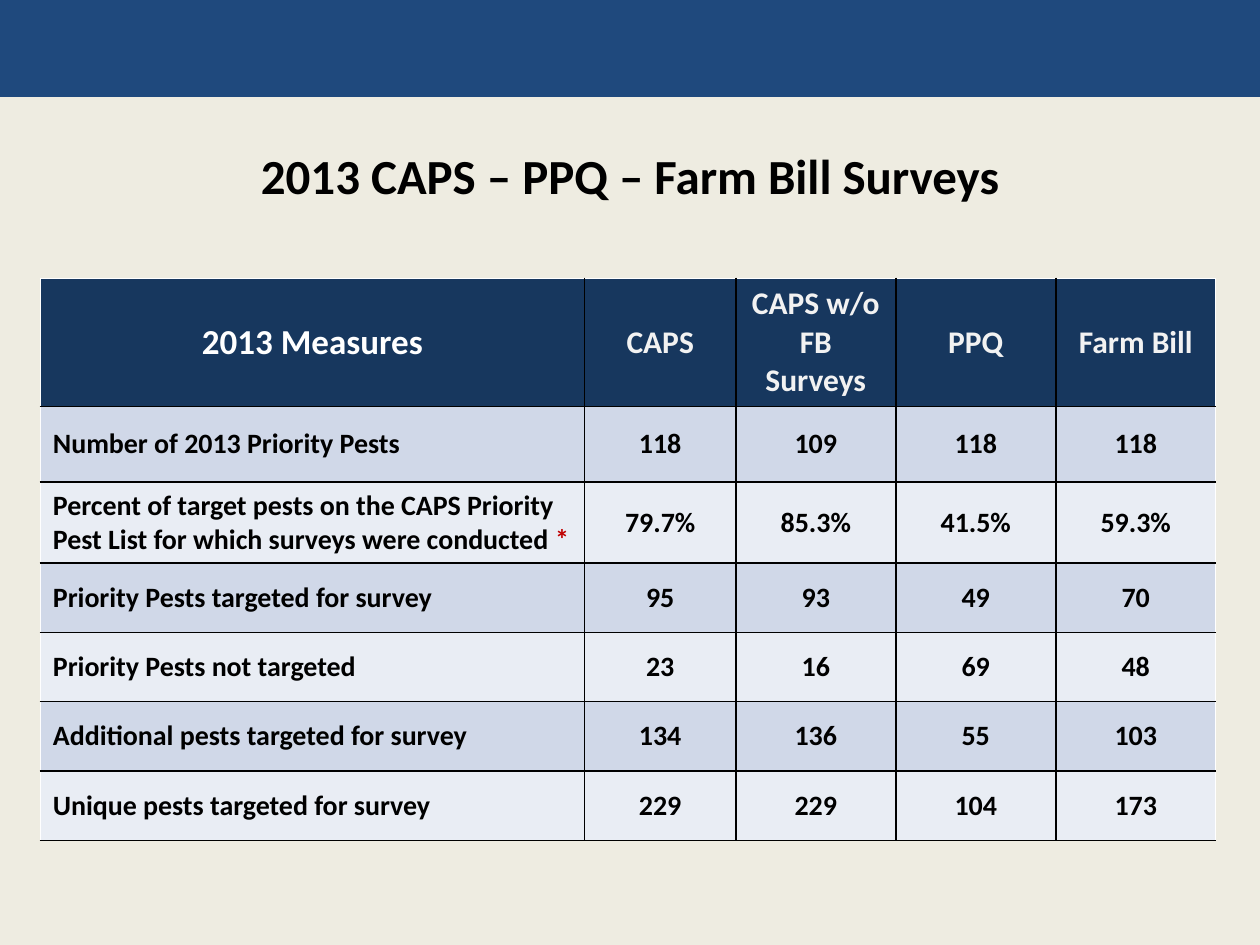
from pptx import Presentation
from pptx.dml.color import RGBColor
from pptx.enum.shapes import MSO_SHAPE
from pptx.enum.text import MSO_ANCHOR, PP_ALIGN
from pptx.oxml import parse_xml
from pptx.oxml.ns import nsdecls
from pptx.util import Inches, Pt

RECTANGLE = MSO_SHAPE.RECTANGLE
MIDDLE = MSO_ANCHOR.MIDDLE
LEFT, CENTER = PP_ALIGN.LEFT, PP_ALIGN.CENTER

BACKGROUND = RGBColor(0xEE, 0xEC, 0xE1)
BAND_BLUE = RGBColor(0x1F, 0x49, 0x7D)
HEADER_BLUE = RGBColor(0x17, 0x37, 0x5E)
ROW_FILLS = (RGBColor(0xE9, 0xED, 0xF4), RGBColor(0xD0, 0xD8, 0xE8))
BLACK = RGBColor(0, 0, 0)
WHITE = RGBColor(0xFF, 0xFF, 0xFF)
LIGHT_GRAY = RGBColor(0xF2, 0xF2, 0xF2)
RED = RGBColor(0xC0, 0, 0)

COLUMN_WIDTHS = (4.32, 1.2, 1.27, 1.27, 1.27)
ROW_HEIGHTS = (1.01, 0.6, 0.64, 0.55, 0.55, 0.55, 0.55)
ROWS = (
    ("2013 Measures", "CAPS", "CAPS w/o FB Surveys", "PPQ", "Farm Bill"),
    ("Number of 2013 Priority Pests", "118", "109", "118", "118"),
    ("Percent of target pests on the CAPS Priority Pest List for which surveys were conducted *",
     "79.7%", "85.3%", "41.5%", "59.3%"),
    ("Priority Pests targeted for survey", "95", "93", "49", "70"),
    ("Priority Pests not targeted", "23", "16", "69", "48"),
    ("Additional pests targeted for survey", "134", "136", "55", "103"),
    ("Unique pests targeted for survey", "229", "229", "104", "173"),
)


def add_text(paragraph, text, size=16, color=BLACK, align=LEFT):
    paragraph.alignment = align
    run = paragraph.add_run()
    run.text = text
    font = run.font
    font.name, font.size, font.bold = "Calibri", Pt(size), True
    font.color.rgb = color
    return run


class SurveySlide:
    """Holds the current slide and draws its elements in one style."""

    def __init__(self, presentation):
        self.slide = presentation.slides.add_slide(presentation.slide_layouts[5])
        fill = self.slide.background.fill
        fill.solid()
        fill.fore_color.rgb = BACKGROUND

    def band(self, width, height):
        shape = self.slide.shapes.add_shape(RECTANGLE, 0, 0, Inches(width), Inches(height))
        shape.shadow.inherit = False
        shape.fill.solid()
        shape.fill.fore_color.rgb = BAND_BLUE
        shape.line.fill.background()

    def title(self, text, left, top, width, height):
        shape = self.slide.shapes.title
        shape.left, shape.top = Inches(left), Inches(top)
        shape.width, shape.height = Inches(width), Inches(height)
        shape.text_frame.vertical_anchor = MIDDLE
        run = add_text(shape.text_frame.paragraphs[0], text, size=28, align=CENTER)
        shadow = parse_xml(
            f'<a:effectLst {nsdecls("a")}><a:outerShdw blurRad="38100" dist="38100" dir="2700000" '
            'algn="tl"><a:srgbClr val="000000"><a:alpha val="43000"/></a:srgbClr>'
            '</a:outerShdw></a:effectLst>')
        run.font.fill._xPr.solidFill.addnext(shadow)

    def borders(self, cell, colors):
        properties = cell._tc.get_or_add_tcPr()
        for index, (side, color) in enumerate(zip("LRTB", colors)):
            properties.insert(index, parse_xml(
                f'<a:ln{side} {nsdecls("a")} w="12700"><a:solidFill>'
                f'<a:srgbClr val="{color}"/></a:solidFill></a:ln{side}>'))

    def cell(self, cell, text, row, column):
        cell.vertical_anchor = MIDDLE
        cell.fill.solid()
        cell.fill.fore_color.rgb = ROW_FILLS[row % 2] if row else HEADER_BLUE
        paragraph = cell.text_frame.paragraphs[0]
        if row == 0:
            size, color = (18, LIGHT_GRAY) if column else (20, WHITE)
            add_text(paragraph, text, size=size, color=color, align=CENTER)
        elif column:
            cell.margin_left = cell.margin_right = cell.margin_top = cell.margin_bottom = 0
            add_text(paragraph, text, align=CENTER)
        else:
            label, mark, _ = text.partition("*")
            add_text(paragraph, label)
            if mark:
                add_text(paragraph, mark, color=RED)
        last_column = len(COLUMN_WIDTHS) - 1
        self.borders(cell, (WHITE if column == 0 else BLACK,
                            WHITE if column == last_column else BLACK,
                            WHITE if row == 0 else BLACK, BLACK))

    def table(self, left, top):
        table = self.slide.shapes.add_table(
            len(ROWS), len(COLUMN_WIDTHS), Inches(left), Inches(top),
            Inches(sum(COLUMN_WIDTHS)), Inches(sum(ROW_HEIGHTS))).table
        for column, width in zip(table.columns, COLUMN_WIDTHS):
            column.width = Inches(width)
        for row, height in zip(table.rows, ROW_HEIGHTS):
            row.height = Inches(height)
        for row, texts in enumerate(ROWS):
            for column, text in enumerate(texts):
                self.cell(table.cell(row, column), text, row, column)


def main():
    presentation = Presentation()
    presentation.slide_width, presentation.slide_height = Inches(10), Inches(7.5)
    survey = SurveySlide(presentation)
    survey.band(10, 0.77)
    survey.title("2013 CAPS – PPQ – Farm Bill Surveys", 0.5, 1, 9, 0.78)
    survey.table(0.32, 2.21)
    presentation.save("out.pptx")


if __name__ == "__main__":
    main()
